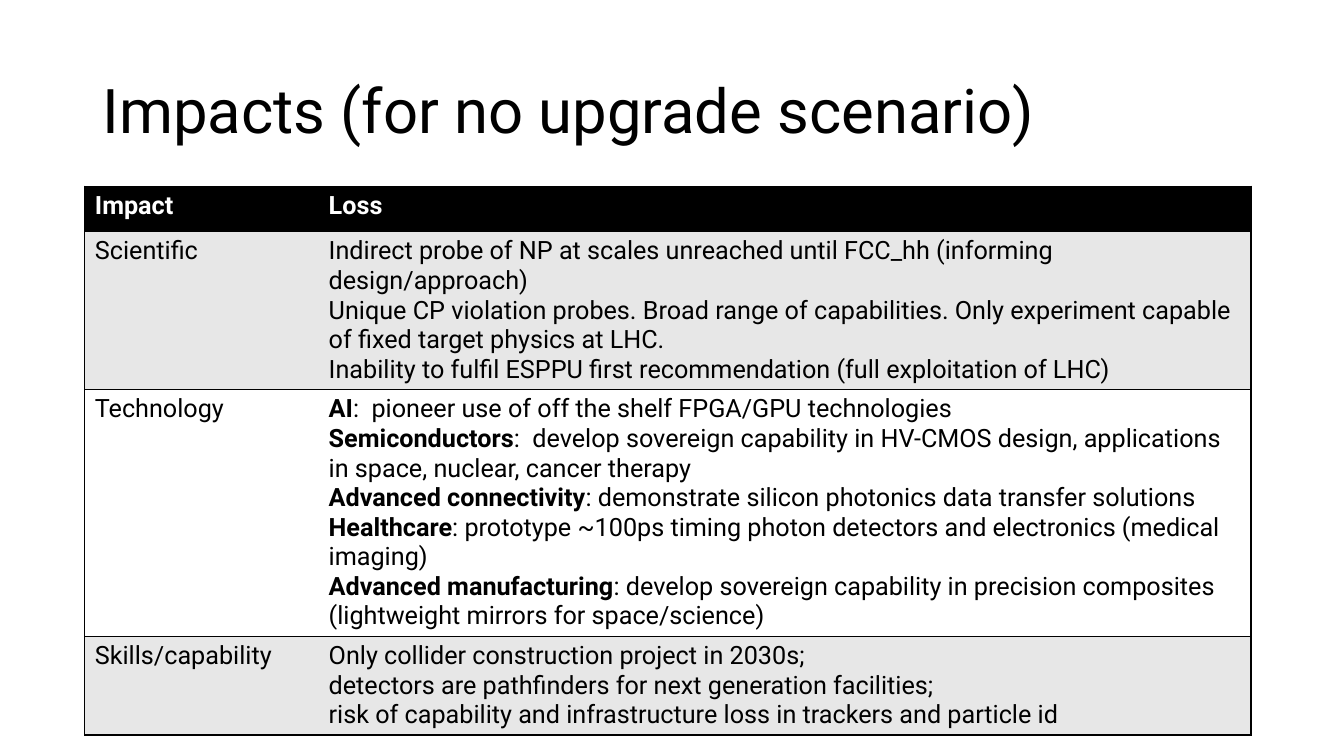
from lxml.etree import SubElement
from pptx import Presentation
from pptx.dml.color import RGBColor
from pptx.enum.text import MSO_ANCHOR, PP_ALIGN
from pptx.oxml.ns import qn
from pptx.util import Pt

BLACK = RGBColor(0x00, 0x00, 0x00)
WHITE = RGBColor(0xFF, 0xFF, 0xFF)
GREY = RGBColor(0xE7, 0xE7, 0xE7)

COLUMN_WIDTHS = (167, 666)
ROW_HEIGHTS = (32.4, 112.5, 176, 70.5)
ROW_FILLS = (BLACK, GREY, WHITE, GREY)

IMPACTS = [
    ("Impact", [("", "Loss")]),
    ("Scientific", [
        ("", "Indirect probe of NP at scales unreached until FCC_hh (informing design/approach)"),
        ("", "Unique CP violation probes. Broad range of capabilities. "
             "Only experiment capable of fixed target physics at LHC."),
        ("", "Inability to fulfil ESPPU first recommendation (full exploitation of LHC)"),
    ]),
    ("Technology", [
        ("AI", ":  pioneer use of off the shelf FPGA/GPU technologies"),
        ("Semiconductors", ":  develop sovereign capability in HV-CMOS design, "
                           "applications in space, nuclear, cancer therapy"),
        ("Advanced connectivity", ": demonstrate silicon photonics data transfer solutions"),
        ("Healthcare", ": prototype ~100ps timing photon detectors and electronics "
                       "(medical imaging)"),
        ("Advanced manufacturing", ": develop sovereign capability in precision composites "
                                   "(lightweight mirrors for space/science)"),
    ]),
    ("Skills/capability", [
        ("", "Only collider construction project in 2030s;"),
        ("", "detectors are pathfinders for next generation facilities;"),
        ("", "risk of capability and infrastructure loss in trackers and particle id"),
    ]),
]


class SlideBuilder:
    """Holds the text style and the current slide, and adds elements to it."""

    def __init__(self, page, font_name="Roboto", text_size=18):
        self.page = page
        self.font_name = font_name
        self.text_size = text_size

    def apply(self, target, values):
        for name, value in values.items():
            setattr(target, name, value)

    def span(self, para, text, color, size=None, bold=False):
        span = para.add_run()
        span.text = text
        self.apply(span.font, {"name": self.font_name, "size": Pt(size or self.text_size),
                               "bold": bold})
        span.font.color.rgb = color

    def title(self, text, left, top, width, height):
        box = self.page.shapes.title
        self.apply(box, {"left": Pt(left), "top": Pt(top),
                         "width": Pt(width), "height": Pt(height)})
        self.apply(box.text_frame, {"vertical_anchor": MSO_ANCHOR.MIDDLE, "word_wrap": True})
        para = box.text_frame.paragraphs[0]
        self.apply(para, {"alignment": PP_ALIGN.LEFT, "line_spacing": 0.9})
        self.span(para, text, BLACK, size=44)

    def borders(self, cell, open_side):
        properties = cell._tc.get_or_add_tcPr()
        for side in ("lnL", "lnR", "lnT", "lnB"):
            line = SubElement(properties, qn(f"a:{side}"), w=str(Pt(1)))
            if side == open_side:
                SubElement(line, qn("a:noFill"))
            else:
                solid = SubElement(line, qn("a:solidFill"))
                SubElement(solid, qn("a:srgbClr"), val=str(BLACK))

    def cell(self, cell, lines, fill, open_side, header):
        self.borders(cell, open_side)
        cell.fill.solid()
        cell.fill.fore_color.rgb = fill
        color = WHITE if header else BLACK
        for index, (lead, text) in enumerate(lines):
            frame = cell.text_frame
            para = frame.add_paragraph() if index else frame.paragraphs[0]
            if lead:
                self.span(para, lead, color, bold=True)
            self.span(para, text, color, bold=header)

    def table(self, rows, left, top):
        frame = self.page.shapes.add_table(
            len(rows), len(COLUMN_WIDTHS), Pt(left), Pt(top),
            Pt(sum(COLUMN_WIDTHS)), Pt(sum(ROW_HEIGHTS)))
        table = frame.table
        for column, width in zip(table.columns, COLUMN_WIDTHS):
            column.width = Pt(width)
        for index, (impact, losses) in enumerate(rows):
            table.rows[index].height = Pt(ROW_HEIGHTS[index])
            contents = (([("", impact)], "lnR"), (losses, "lnL"))
            for position, (lines, open_side) in enumerate(contents):
                self.cell(table.cell(index, position), lines, ROW_FILLS[index],
                          open_side, header=index == 0)


def main():
    deck = Presentation()
    deck.slide_width, deck.slide_height = Pt(960), Pt(540)
    builder = SlideBuilder(deck.slides.add_slide(deck.slide_layouts[5]))
    builder.title("Impacts (for no upgrade scenario)", 66, 28.8, 828, 104.4)
    builder.table(IMPACTS, 60.6, 133)
    deck.save("out.pptx")


if __name__ == "__main__":
    main()
